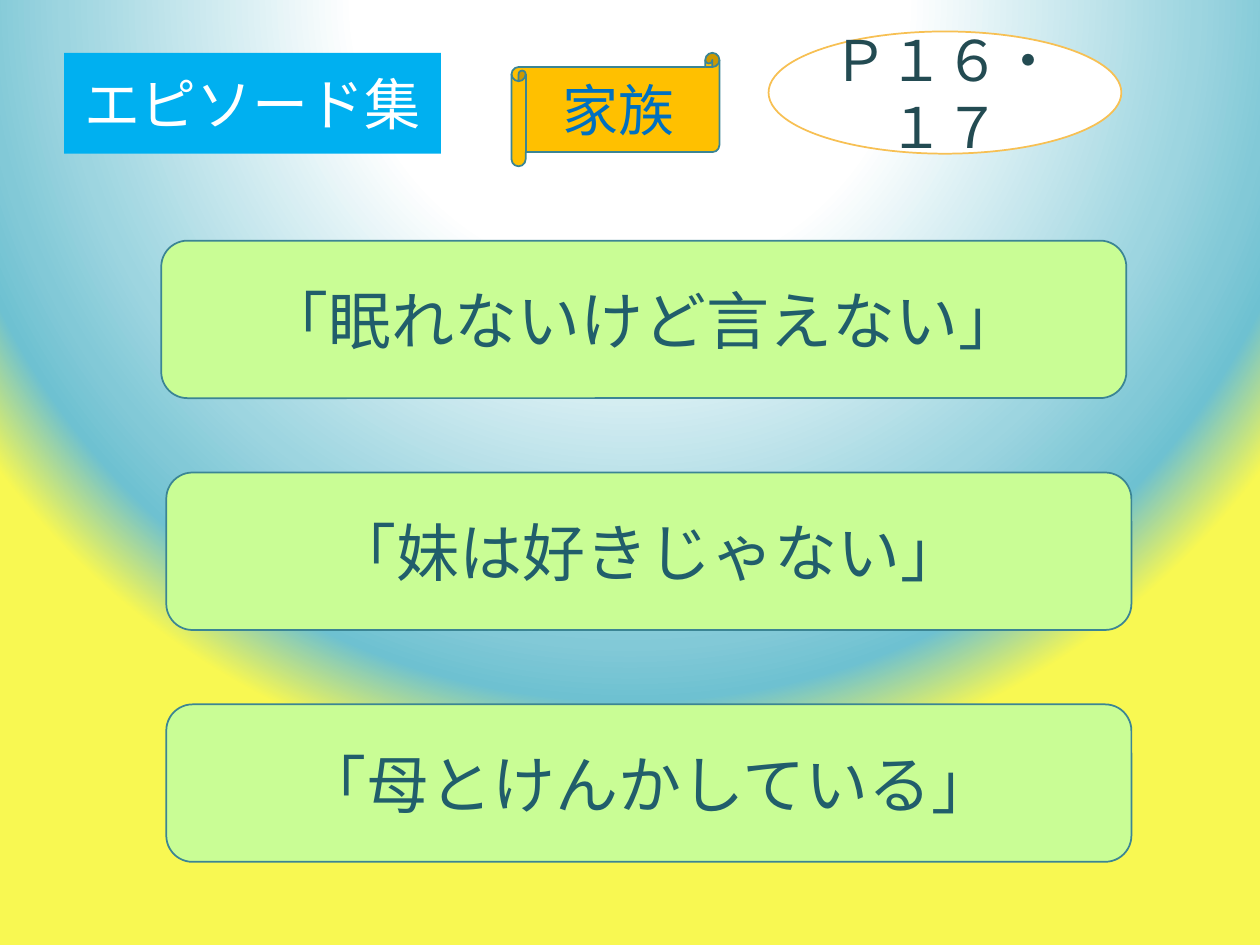
from lxml import etree
from pptx import Presentation
from pptx import util as u
from pptx.dml.color import RGBColor
from pptx.enum import shapes, text
from pptx.oxml import parse_xml
from pptx.oxml.ns import qn

C = {"white": "FFFFFF", "blue": "00B0F0", "orange": "F7C053", "ink": "234B52",
     "green": "C9FD95", "teal": "3B8594", "deep": "215E6B",
     "gold": "FFC000", "royal": "0070C0"}
STOPS = [(0, "FFFFFF"), (35, "FFFFFF"), (72, "9DD5E0"),
         (82, "82C9D7"), (89, "6EC1D1"), (100, "F8F852")]
JP = "Noto Sans CJK JP"


def style(sp, words, size, font, color, fill, line=None):
    sp.shadow.inherit = False
    sp.fill.solid()
    sp.fill.fore_color.rgb = RGBColor.from_string(C[fill])
    if line:
        sp.line.color.rgb = RGBColor.from_string(C[line])
        sp.line.width = u.Pt(1)
    else:
        sp.line.fill.background()
    tf = sp.text_frame
    tf.word_wrap = True
    tf.auto_size = text.MSO_AUTO_SIZE.NONE
    tf.vertical_anchor = text.MSO_ANCHOR.MIDDLE
    p = tf.paragraphs[0]
    p.alignment = text.PP_ALIGN.CENTER
    r = p.add_run()
    r.text = words
    r.font.size = u.Pt(size)
    r.font.name = font
    r.font.color.rgb = RGBColor.from_string(C[color])
    etree.SubElement(r.font._element, qn("a:ea")).set("typeface", font)


def add(kind, x, y, w, h, *look):
    sp = s.shapes.add_shape(kind, u.Inches(x), u.Inches(y), u.Inches(w), u.Inches(h))
    style(sp, *look)


prs = Presentation()
prs.slide_width, prs.slide_height = u.Inches(10), u.Inches(7.5)
s = prs.slides.add_slide(prs.slide_layouts[5])

s.background.fill.gradient()
old = s.background._cSld.find(".//" + qn("a:gradFill"))
stops = "".join(f'<a:gs pos="{pos * 1000}"><a:srgbClr val="{c}"/></a:gs>' for pos, c in STOPS)
old.getparent().replace(old, parse_xml(
    '<a:gradFill xmlns:a="http://schemas.openxmlformats.org/drawingml/2006/main" rotWithShape="1">'
    f'<a:gsLst>{stops}</a:gsLst><a:path path="circle">'
    '<a:fillToRect l="50000" t="-80000" r="50000" b="180000"/></a:path></a:gradFill>'))

title = s.shapes.title
title.left, title.top = u.Inches(0.51), u.Inches(0.42)
title.width, title.height = u.Inches(2.99), u.Inches(0.8)
style(title, "エピソード集", 32, JP, "white", "blue")

shape = shapes.MSO_SHAPE
add(shape.OVAL, 6.1, 0.25, 2.8, 0.97, "Ｐ１６・１７", 32, "Calibri", "ink", "white", "orange")

episodes = [(1.28, "「眠れないけど言えない」"), (1.32, "「妹は好きじゃない」"),
            (1.32, "「母とけんかしている」")]
for i, (x, words) in enumerate(episodes):
    add(shape.FLOWCHART_ALTERNATE_PROCESS, x, 1.91 + 1.84 * i, 7.66, 1.25,
        words, 36, JP, "deep", "green", "teal")

add(shape.HORIZONTAL_SCROLL, 4.06, 0.42, 1.65, 0.9, "家族", 32, JP, "royal", "gold", "teal")

prs.save("out.pptx")
